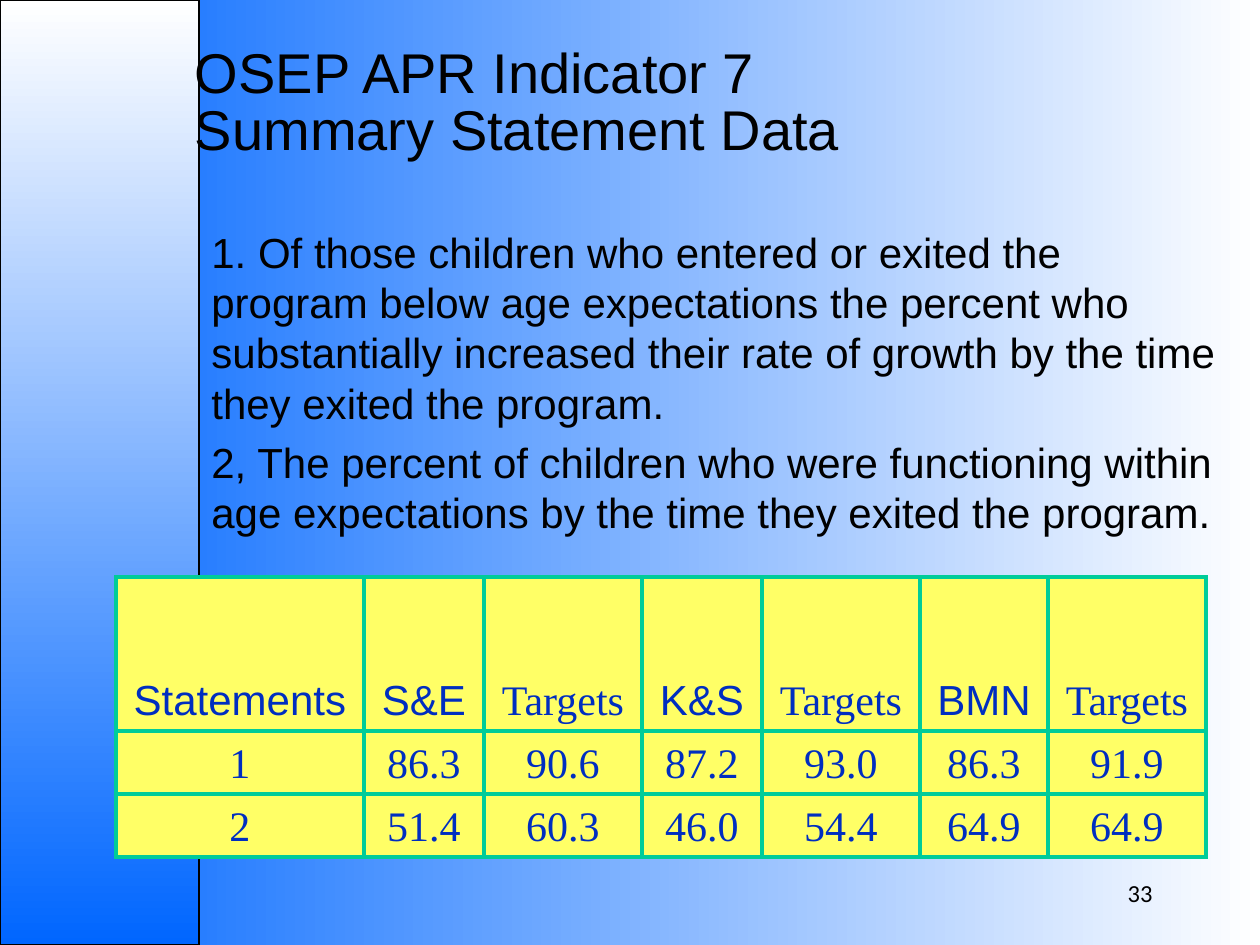
from dataclasses import dataclass

from lxml.etree import SubElement
from pptx import Presentation
from pptx.dml.color import RGBColor
from pptx.enum.shapes import MSO_SHAPE as Shape
from pptx.enum.text import MSO_ANCHOR as Anchor, PP_ALIGN as Align
from pptx.oxml.ns import qn
from pptx.util import Emu, Pt

# Content
TITLE = ["OSEP APR Indicator 7", "Summary Statement Data"]
STATEMENTS = [
    "1. Of those children who entered or exited the program below age expectations "
    "the percent who substantially increased their rate of growth by the time they "
    "exited the program.",
    "2, The percent of children who were functioning within age expectations by the "
    "time they exited the program.",
]
RESULTS = [
    ["Statements", "S&E", "Targets", "K&S", "Targets", "BMN", "Targets"],
    ["1", "86.3", "90.6", "87.2", "93.0", "86.3", "91.9"],
    ["2", "51.4", "60.3", "46.0", "54.4", "64.9", "64.9"],
]
PAGE_NUMBER = "33"

# Places, in px
SLIDE_SIZE = (1260, 945)
SIDEBAR_BOX = (0, 0, 199, 945)
TITLE_BOX = (189, 32, 1071, 136)
BODY_BOX = (199, 220, 1040, 326)
NUMBER_BOX = (903, 861, 262, 63)
TABLE_ORIGIN = (116, 577)
COLUMN_WIDTHS = [248, 120, 158, 120, 158, 128, 158]
ROW_HEIGHTS = [154, 59, 59]


@dataclass(frozen=True)
class Theme:
    blue: str = "0066FF"
    white: str = "FFFFFF"
    black: str = "000000"
    cell: str = "FFFF66"
    border: str = "00CC99"
    table_text: str = "002EC0"
    sans: str = "Arial"
    serif: str = "Times New Roman"
    number_font: str = "Calibri"
    title_size: int = 32
    text_size: int = 24
    number_size: int = 14
    border_width: float = 2.25


THEME = Theme()


def px(value):
    return Emu(round(value * 914400 / 126))


def rgb(value):
    return RGBColor.from_string(value)


def set_gradient(fill, start, end, angle):
    fill.gradient()
    fill.gradient_angle = angle
    for stop, color, position in zip(fill.gradient_stops, (start, end), (0, 1)):
        stop.color.rgb = rgb(color)
        stop.position = position


def add_run(paragraph, text, font, size, color=THEME.black):
    run = paragraph.add_run()
    run.text = text
    run.font.name = font
    run.font.size = Pt(size)
    run.font.color.rgb = rgb(color)


def add_text_frame(slide, box, anchor=Anchor.TOP):
    frame = slide.shapes.add_textbox(*map(px, box)).text_frame
    frame.word_wrap = True
    frame.vertical_anchor = anchor
    return frame


def set_borders(cell):
    properties = cell._tc.get_or_add_tcPr()
    for index, side in enumerate(("a:lnL", "a:lnR", "a:lnT", "a:lnB")):
        line = properties.makeelement(qn(side), {"w": str(Pt(THEME.border_width))})
        properties.insert(index, line)
        fill = SubElement(line, qn("a:solidFill"))
        SubElement(fill, qn("a:srgbClr"), val=THEME.border)


def add_results_table(slide):
    size = (sum(COLUMN_WIDTHS), sum(ROW_HEIGHTS))
    table = slide.shapes.add_table(
        len(RESULTS), len(COLUMN_WIDTHS), *map(px, TABLE_ORIGIN + size)).table
    for column, width in zip(table.columns, COLUMN_WIDTHS):
        column.width = px(width)
    for row, height, values in zip(table.rows, ROW_HEIGHTS, RESULTS):
        row.height = px(height)
        for cell, value in zip(row.cells, values):
            cell.fill.solid()
            cell.fill.fore_color.rgb = rgb(THEME.cell)
            cell.vertical_anchor = Anchor.BOTTOM
            set_borders(cell)
            paragraph = cell.text_frame.paragraphs[0]
            paragraph.alignment = Align.CENTER
            is_area = values is RESULTS[0] and value != "Targets"
            font = THEME.sans if is_area else THEME.serif
            add_run(paragraph, value, font, THEME.text_size, THEME.table_text)


def main():
    presentation = Presentation()
    presentation.slide_width, presentation.slide_height = map(px, SLIDE_SIZE)
    slide = presentation.slides.add_slide(presentation.slide_layouts[6])

    # Background and sidebar
    set_gradient(slide.background.fill, THEME.blue, THEME.white, 0)
    sidebar = slide.shapes.add_shape(Shape.RECTANGLE, *map(px, SIDEBAR_BOX))
    sidebar.shadow.inherit = False
    set_gradient(sidebar.fill, THEME.white, THEME.blue, 270)
    sidebar.line.color.rgb = rgb(THEME.black)
    sidebar.line.width = Pt(0.75)

    # Title
    frame = add_text_frame(slide, TITLE_BOX, Anchor.BOTTOM)
    frame.margin_left = frame.margin_right = px(6)
    paragraph = frame.paragraphs[0]
    paragraph.line_spacing = 0.85
    for index, line in enumerate(TITLE):
        if index:
            paragraph.add_line_break()
        add_run(paragraph, line, THEME.sans, THEME.title_size)

    # Summary statements
    frame = add_text_frame(slide, BODY_BOX)
    for index, statement in enumerate(STATEMENTS):
        paragraph = frame.add_paragraph() if index else frame.paragraphs[0]
        if index:
            paragraph.space_before = Pt(0.2 * THEME.text_size)
        add_run(paragraph, statement, THEME.sans, THEME.text_size)

    # Results and page number
    add_results_table(slide)
    paragraph = add_text_frame(slide, NUMBER_BOX, Anchor.MIDDLE).paragraphs[0]
    paragraph.alignment = Align.RIGHT
    add_run(paragraph, PAGE_NUMBER, THEME.number_font, THEME.number_size)

    presentation.save("out.pptx")


if __name__ == "__main__":
    main()
